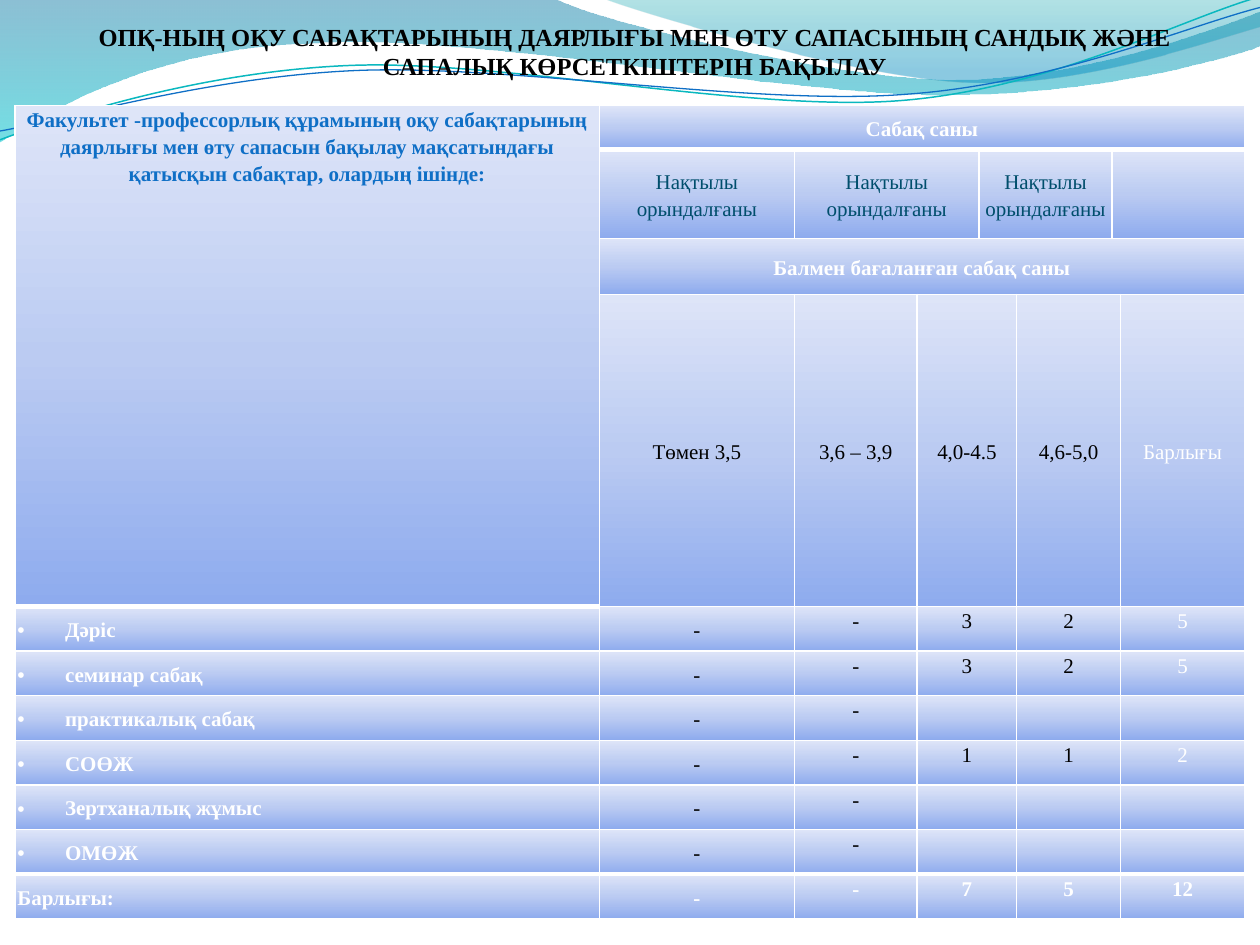
import math

from lxml import etree
from pptx import Presentation
from pptx.dml.color import RGBColor
from pptx.enum import text
from pptx.oxml import ns
from pptx.util import Pt

COLORS = {
    "white": "FFFFFF", "black": "000000", "blue": "0F6FC6", "navy": "004E6C",
    "teal": "0AB8BF", "cell_dark": "8EABEE", "cell_mid": "BBCBF2", "cell_light": "DEE5F8",
    "wave_blue": "0074A1", "wave_cyan": "00C6CF", "wave_teal": "00A1A9", "wave_sky": "008BBF",
}
CENTER, JUSTIFY = text.PP_ALIGN.CENTER, text.PP_ALIGN.JUSTIFY
TOP, MIDDLE = text.MSO_ANCHOR.TOP, text.MSO_ANCHOR.MIDDLE
CELL_STOPS = [(0, "cell_dark", 100), (50, "cell_mid", 100), (100, "cell_light", 100)]


def add_xml(parent, tag, **attributes):
    return etree.SubElement(parent, ns.qn(tag), attributes)


def rotate(point, center, degrees):
    angle = math.radians(degrees)
    dx, dy = point[0] - center[0], point[1] - center[1]
    return (center[0] + dx * math.cos(angle) - dy * math.sin(angle),
            center[1] + dx * math.sin(angle) + dy * math.cos(angle))


class SlideBuilder:
    font = "Times New Roman"

    def __init__(self, slide):
        self.slide = slide

    def color(self, name):
        return RGBColor.from_string(COLORS[name])

    def format_text(self, frame, content, size, color, bold, align, spacing=None):
        frame.text = content
        for paragraph in frame.paragraphs:
            paragraph.alignment = align
            paragraph.line_spacing = spacing
            for run in paragraph.runs:
                run.font.name, run.font.size, run.font.bold = self.font, Pt(size), bold
                run.font.color.rgb = self.color(color)

    def gradient(self, fill, parent, stops, angle):
        fill.gradient()
        gradient = parent.find(ns.qn("a:gradFill"))
        for child in list(gradient):
            gradient.remove(child)
        stop_list = add_xml(gradient, "a:gsLst")
        for position, name, opacity in stops:
            stop = add_xml(stop_list, "a:gs", pos=str(position * 1000))
            color = add_xml(stop, "a:srgbClr", val=COLORS[name])
            if opacity < 100:
                add_xml(color, "a:alpha", val=str(opacity * 1000))
        add_xml(gradient, "a:lin", ang=str(angle * 60000), scaled="0")

    def outline(self, points, segments, closed):
        """Freeform whose segments are lines (2 numbers) or cubic curves (6 numbers)."""
        points = [(Pt(x * 72), Pt(y * 72)) for x, y in points]
        builder = self.slide.shapes.build_freeform(*points[0])
        builder.add_line_segments(points[1:], close=closed)
        shape = builder.convert_to_shape()
        shape.shadow.inherit = False
        lines = iter(list(shape._element.iter(ns.qn("a:lnTo"))))
        for segment in segments:
            first = next(lines)
            if len(segment) == 6:
                first.tag = ns.qn("a:cubicBezTo")
                for line in (next(lines), next(lines)):
                    first.append(line[0])
                    line.getparent().remove(line)
        return shape

    def wave(self, start, segments, stops):
        points = [start] + [s[i:i + 2] for s in segments for i in range(0, len(s), 2)]
        shape = self.outline(points, segments, True)
        self.gradient(shape.fill, shape._element.spPr, stops, 90)
        shape.line.fill.background()

    def strand(self, start, segments, center, color, width, tilt=-2.7):
        points = [start] + [s[i:i + 2] for s in segments for i in range(0, len(s), 2)]
        level_points = [rotate(point, center, -tilt) for point in points]
        shape = self.outline(level_points, segments, False)
        # Turn about the middle of the box, then put the start point back in place
        middle = ((shape.left + shape.width / 2) / Pt(72), (shape.top + shape.height / 2) / Pt(72))
        turned = rotate(level_points[0], middle, tilt)
        shape.left += Pt((start[0] - turned[0]) * 72)
        shape.top += Pt((start[1] - turned[1]) * 72)
        shape.rotation = tilt
        shape.fill.background()
        shape.line.color.rgb = self.color(color)
        shape.line.width = Pt(width)

    def title(self, content, left, top, width, height, size):
        shape = self.slide.shapes.title
        shape.left, shape.top, shape.width, shape.height = map(Pt, (left, top, width, height))
        frame = shape.text_frame
        frame.word_wrap = True
        frame.auto_size = text.MSO_AUTO_SIZE.SHAPE_TO_FIT_TEXT
        frame.vertical_anchor = TOP
        self.format_text(frame, content, size, "black", True, CENTER)
        # Bring the title in front of the waves
        self.slide.shapes._spTree.append(shape._element)

    def table(self, left, top, widths, heights):
        table = self.slide.shapes.add_table(
            len(heights), len(widths), Pt(left), Pt(top), Pt(sum(widths)), Pt(sum(heights))).table
        table.first_row = table.horz_banding = False
        for column, width in zip(table.columns, widths):
            column.width = Pt(width)
        for row, height in zip(table.rows, heights):
            row.height = Pt(height)
        return table

    def cell_style(self, cell, borders):
        cell.margin_left = cell.margin_right = Pt(1.4)
        cell.margin_top = cell.margin_bottom = 0
        properties = cell._tc.get_or_add_tcPr()
        for side, width in zip("LRTB", borders):
            line = add_xml(properties, "a:ln" + side, w=str(Pt(width)))
            add_xml(add_xml(line, "a:solidFill"), "a:srgbClr", val=COLORS["white"])
        self.gradient(cell.fill, properties, CELL_STOPS, 270)

    def cell_text(self, cell, content, color, bold=False, align=CENTER, anchor=MIDDLE):
        cell.vertical_anchor = anchor
        self.format_text(cell.text_frame, content, 12, color, bold, align, 1.15)

    def bullet(self, cell, indent):
        properties = cell.text_frame.paragraphs[0]._p.get_or_add_pPr()
        properties.set("marL", str(Pt(indent)))
        properties.set("indent", str(-Pt(indent)))
        add_xml(properties, "a:buFont", typeface="Arial")
        add_xml(properties, "a:buChar", char="•")


presentation = Presentation()
presentation.slide_width, presentation.slide_height = Pt(720), Pt(540)
builder = SlideBuilder(presentation.slides.add_slide(presentation.slide_layouts[5]))

# Background waves
builder.wave((0, 0), [
    (4.4, -0.01), (4.76, 0.17, 6.64, 0.63, 7.58, 0.63), (8.53, 0.63, 9.58, 0.26, 10, 0.09),
    (10.01, 0.36), (9.83, 0.44, 8.7, 0.76, 7.46, 0.75), (6.22, 0.75, 3.82, 0.28, 2.57, 0.34),
    (1.29, 0.36, 0.46, 0.83, -0.01, 1.13)],
    [(0, "wave_blue", 45), (100, "wave_cyan", 55)])
builder.wave((4.79, -0.01), [
    (5.09, 0.11, 6.82, 0.62, 7.69, 0.65), (8.56, 0.69, 9.61, 0.32, 10, 0.21), (10, 0)],
    [(0, "wave_teal", 30), (80, "wave_sky", 45)])
builder.strand((0, 1.11), [
    (0.48, 0.93, 1.58, 0.57, 2.77, 0.52), (3.95, 0.47, 5.93, 0.89, 7.13, 0.8),
    (8.33, 0.71, 9.38, 0.15, 9.98, -0.02)], (4.99, 0.58), "teal", 0.85)
builder.strand((0, 1.04), [
    (0.47, 0.96, 1.64, 0.61, 2.83, 0.56), (4.03, 0.51, 5.97, 0.84, 7.17, 0.75),
    (8.36, 0.67, 9.41, 0.21, 10, 0.06)], (5, 0.59), "blue", 0.75)

builder.title("ОПҚ-НЫҢ ОҚУ САБАҚТАРЫНЫҢ ДАЯРЛЫҒЫ МЕН ӨТУ САПАСЫНЫҢ САНДЫҚ ЖӘНЕ "
              "САПАЛЫҚ КӨРСЕТКІШТЕРІН БАҚЫЛАУ", 25.5, 9, 674.6, 41, 14)

# Table grid: thick rules under the headings and above the total
ROW = 25.5
table = builder.table(8.6, 60.4, [334, 111.4, 70.2, 35.4, 21.5, 54.4, 5, 70.8],
                      [25.2, 50.6, 32, 178.4] + [ROW] * 7)
TOTAL_ROW = 10


def rule_below(row, column):
    thick = row == TOTAL_ROW - 1 or (row == 3 and column == 0) or (row == 0 and column > 0)
    return 3 if thick else 1


for row in range(len(table.rows)):
    for column in range(len(table.columns)):
        builder.cell_style(table.cell(row, column),
                           (1, 1, rule_below(row - 1, column), rule_below(row, column)))

# Merged cells
table.cell(0, 0).merge(table.cell(3, 0))
for row in (0, 2):
    table.cell(row, 1).merge(table.cell(row, 7))
for column in (2, 4, 6):
    table.cell(1, column).merge(table.cell(1, column + 1))
for row in range(3, TOTAL_ROW + 1):
    for column in (3, 5):
        table.cell(row, column).merge(table.cell(row, column + 1))

# Headings
builder.cell_text(table.cell(0, 0), "Факультет -профессорлық құрамының оқу сабақтарының даярлығы "
                  "мен өту сапасын бақылау мақсатындағы қатысқын сабақтар, олардың ішінде:",
                  "blue", True, anchor=TOP)
builder.cell_text(table.cell(0, 1), "Сабақ саны", "white", True)
for column in (1, 2, 4):
    builder.cell_text(table.cell(1, column), "Нақтылы орындалғаны", "navy")
builder.cell_text(table.cell(2, 1), "Балмен бағаланған сабақ саны", "white", True)

SCORE_COLUMNS = (1, 2, 3, 5, 7)
scores = ["Төмен 3,5", "3,6 – 3,9", "4,0-4.5", "4,6-5,0", "Барлығы"]
for column, score in zip(SCORE_COLUMNS, scores):
    builder.cell_text(table.cell(3, column), score, "white" if column == 7 else "black")

# Lesson counts
lessons = [
    ("Дәріс", "- - 3 2 5"),
    ("семинар сабақ", "- - 3 2 5"),
    ("практикалық сабақ", "- -"),
    ("СОӨЖ", "- - 1 1 2"),
    ("Зертханалық жұмыс", "- -"),
    ("ОМӨЖ", "- -"),
    ("Барлығы:", "- - 7 5 12"),
]
for row, (label, counts) in enumerate(lessons, start=4):
    is_total = row == TOTAL_ROW
    builder.cell_text(table.cell(row, 0), label, "white", True, JUSTIFY)
    if not is_total:
        builder.bullet(table.cell(row, 0), 27.2)
    for column, count in zip(SCORE_COLUMNS, counts.split()):
        builder.cell_text(table.cell(row, column), count,
                          "white" if is_total or column == 7 else "black", is_total,
                          anchor=MIDDLE if column == 1 else TOP)

presentation.save("out.pptx")
